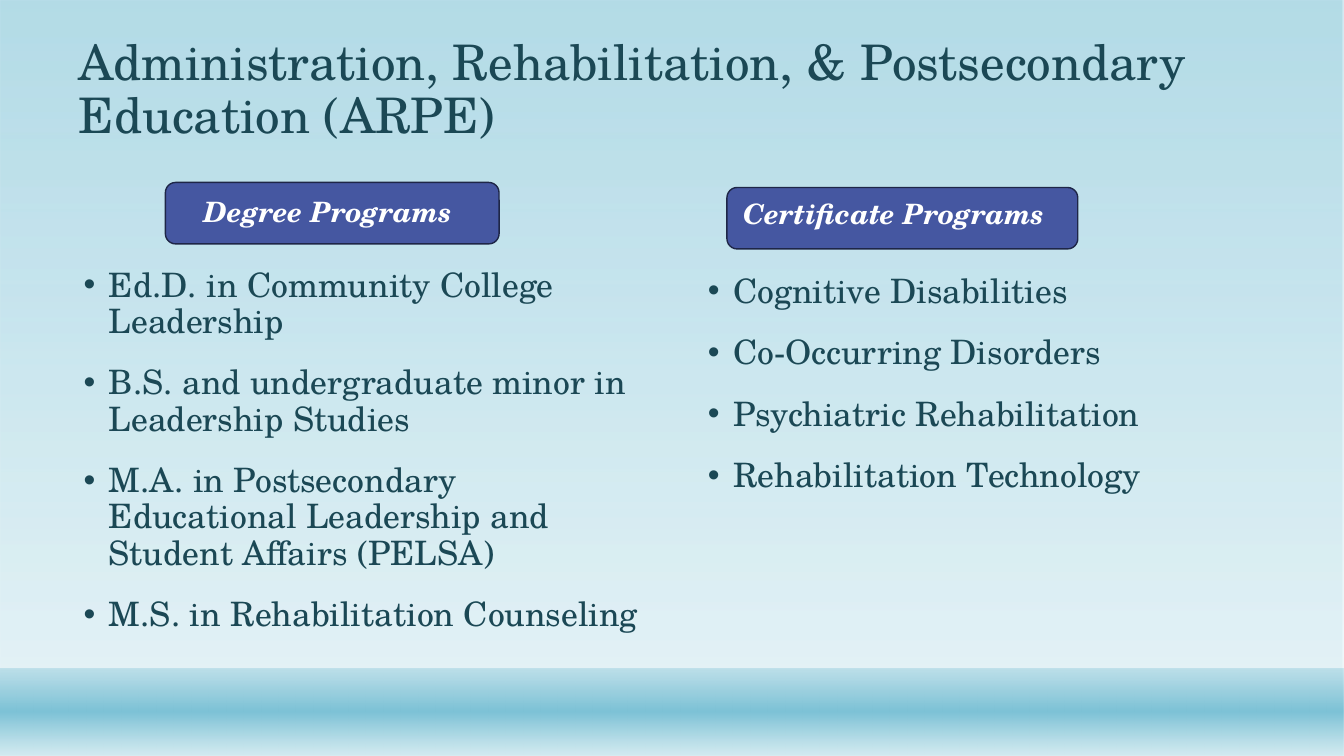
"""Build the ARPE slide of degree and certificate programs."""
from dataclasses import dataclass

from lxml import etree
from pptx import Presentation
from pptx.dml.color import RGBColor
from pptx.enum.shapes import MSO_SHAPE
from pptx.enum.text import MSO_ANCHOR, MSO_AUTO_SIZE, PP_ALIGN
from pptx.oxml.ns import qn
from pptx.util import Inches, Pt

RECT, ROUND = MSO_SHAPE.RECTANGLE, MSO_SHAPE.ROUNDED_RECTANGLE
TOP, MIDDLE, BOTTOM = MSO_ANCHOR.TOP, MSO_ANCHOR.MIDDLE, MSO_ANCHOR.BOTTOM
LEFT = PP_ALIGN.LEFT
FIXED = MSO_AUTO_SIZE.NONE


@dataclass
class Theme:
    """Colours, font and type sizes."""
    font: str = "TeX Gyre Schola"
    ink: str = "1B4855"
    white: str = "FFFFFF"
    badge: str = "4557A1"
    edge: str = "1E2647"
    sea: str = "7DC2D6"
    mist: str = "D4EBF1"
    title: int = 35
    head: int = 20
    body: int = 24


theme = Theme()


def add_box(kind, spot, order):
    """Add a shape without shadow at the given place in the stack."""
    box = slide.shapes.add_shape(kind, *map(Inches, spot))
    box.shadow.inherit = False
    slide.shapes._spTree.insert(2 + order, box._element)
    return box


def set_text(holder, spot, lines, size, color, anchor):
    """Place a placeholder and fill it with formatted lines."""
    holder.left, holder.top, holder.width, holder.height = map(Inches, spot)
    frame = holder.text_frame
    frame.text = "\n".join(lines)
    frame.word_wrap = True
    frame.auto_size = FIXED
    frame.vertical_anchor = anchor
    for para in frame.paragraphs:
        para.alignment = LEFT
        para.line_spacing = 0.9
        para.space_before = Pt(0)
        font = para.runs[0].font
        font.name = theme.font
        font.size = Pt(size)
        font.color.rgb = RGBColor.from_string(color)
    return frame


deck = Presentation()
deck.slide_width, deck.slide_height = Inches(13.33), Inches(7.5)
slide = deck.slides.add_slide(deck.slide_layouts[4])

bands = [
    ((0, 0, 13.33, 7.5), [(0, theme.sea, 58), (88, theme.mist, 65)]),
    ((0, 6.63, 13.33, 0.87),
     [(1, theme.sea, 38), (49, theme.sea, 100), (100, theme.mist, 89)]),
]
for order, (spot, stops) in enumerate(bands):
    band = add_box(RECT, spot, order)
    band.line.fill.background()
    band.fill.gradient()
    band.fill.gradient_angle = 270
    ramp = band._element.spPr.find(qn("a:gradFill")).find(qn("a:gsLst"))
    for old in list(ramp):
        ramp.remove(old)
    for place, color, alpha in stops:
        stop = etree.SubElement(ramp, qn("a:gs"), pos=str(place * 1000))
        tint = etree.SubElement(stop, qn("a:srgbClr"), val=color)
        etree.SubElement(tint, qn("a:alpha"), val=str(alpha * 1000))

set_text(slide.shapes.title, (0.68, 0.29, 11.19, 1.19),
         ["Administration, Rehabilitation, & Postsecondary Education (ARPE)"],
         theme.title, theme.ink, BOTTOM)

columns = [
    ("Degree Programs", (1.64, 1.81, 3.31, 0.61), (1.92, 1.86, 3.73, 0.84),
     (0.68, 2.61, 5.79, 3.66),
     ["Ed.D. in Community College Leadership",
      "B.S. and undergraduate minor in Leadership Studies",
      "M.A. in Postsecondary Educational Leadership and Student Affairs (PELSA)",
      "M.S. in Rehabilitation Counseling"]),
    ("Certificate Programs", (7.21, 1.86, 3.48, 0.61), (7.27, 1.88, 4.2, 0.84),
     (6.87, 2.67, 5, 2.82),
     ["Cognitive Disabilities", "Co-Occurring Disorders",
      "Psychiatric Rehabilitation", "Rehabilitation Technology"]),
]
for col, (head, badge, label, area, items) in enumerate(columns):
    box = add_box(ROUND, badge, len(bands) + col)
    box.fill.solid()
    box.fill.fore_color.rgb = RGBColor.from_string(theme.badge)
    box.line.color.rgb = RGBColor.from_string(theme.edge)
    box.line.width = Pt(1)

    frame = set_text(slide.placeholders[1 + 2 * col], label, [head],
                     theme.head, theme.white, MIDDLE)
    frame.margin_bottom = Inches(0.37)
    font = frame.paragraphs[0].runs[0].font
    font.bold = font.italic = True

    frame = set_text(slide.placeholders[2 + 2 * col], area, items,
                     theme.body, theme.ink, TOP)
    for row, para in enumerate(frame.paragraphs):
        para.space_before = Pt(18 if row else 0)
        props = para._p.get_or_add_pPr()
        props.set("marL", str(Inches(0.3)))
        props.set("indent", str(Inches(-0.25)))
        etree.SubElement(props, qn("a:buFont"), typeface="Arial")
        etree.SubElement(props, qn("a:buChar"), char="•")

deck.save("out.pptx")
